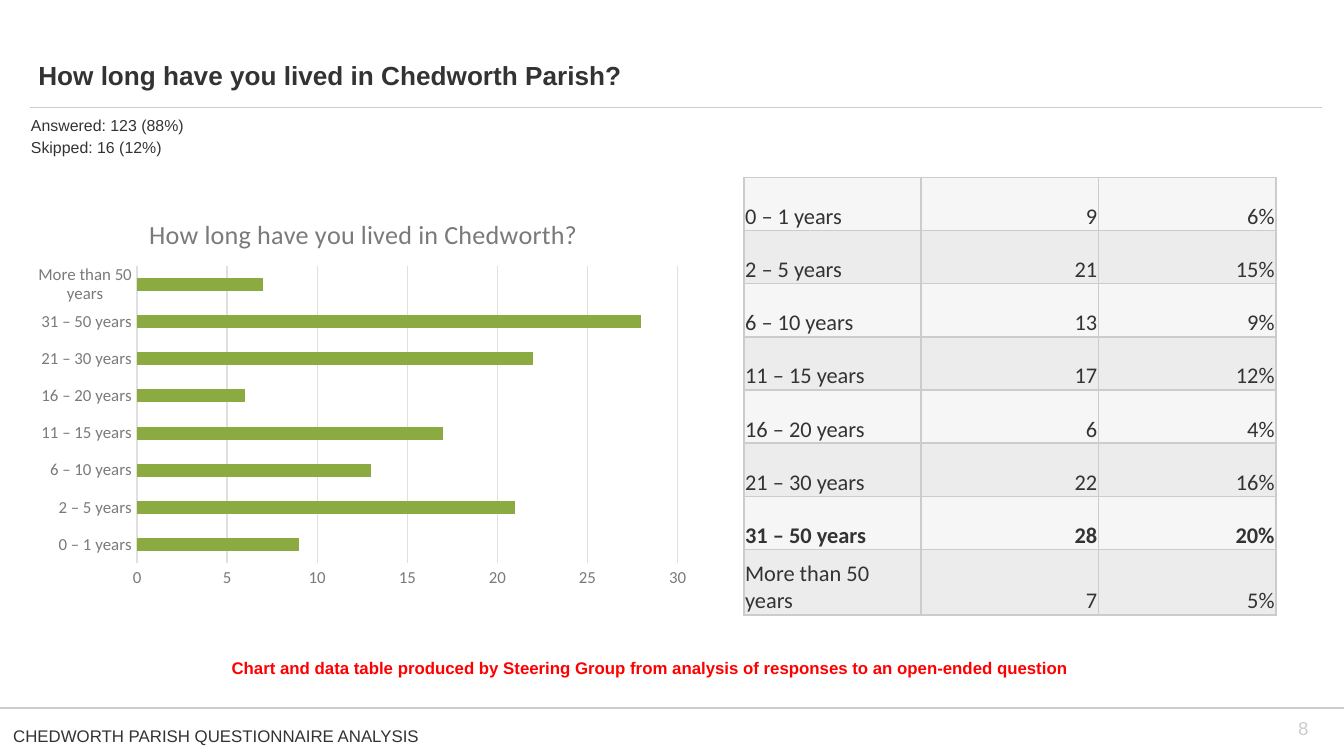
from dataclasses import dataclass

from lxml import etree
from pptx import Presentation
from pptx import chart as _chart
from pptx.chart import data as chart_data
from pptx.dml import color
from pptx.enum import chart as chart_enum, shapes, text
from pptx.oxml import ns, xmlchemy
from pptx.util import Pt


@dataclass(frozen=True)
class Theme:
    ink: str = "333333"
    muted: str = "7A7A7A"
    rule: str = "CCCCCC"
    grid: str = "E0E0E0"
    bar: str = "8BAB42"
    note: str = "FF0000"
    paper: str = "FFFFFF"
    bands: tuple = ("F6F6F6", "ECECEC")
    body: str = "Arial"
    data: str = "Calibri"
    title_size: float = 14
    table_size: float = 12
    number_size: float = 10
    small_size: float = 9
    answer_size: float = 8.5


THEME = Theme()
QUESTION = "How long have you lived in Chedworth"
RESPONSES = [
    ("0 – 1 years", 9, "6%"),
    ("2 – 5 years", 21, "15%"),
    ("6 – 10 years", 13, "9%"),
    ("11 – 15 years", 17, "12%"),
    ("16 – 20 years", 6, "4%"),
    ("21 – 30 years", 22, "16%"),
    ("31 – 50 years", 28, "20%"),
    ("More than 50 years", 7, "5%"),
]
ALIGN = text.PP_ALIGN
ANCHOR = text.MSO_ANCHOR


def rgb(value):
    return color.RGBColor.from_string(value)


def apply(target, values):
    for name, value in values.items():
        setattr(target, name, value)


def format_font(font, size, fill, name=THEME.body, bold=False):
    apply(font, {"size": Pt(size), "name": name, "bold": bold})
    font.color.rgb = rgb(fill)


def place(shape, box):
    apply(shape, dict(zip(("left", "top", "width", "height"), map(Pt, box))))


def write(frame, lines, size, fill, align=ALIGN.LEFT, anchor=ANCHOR.TOP, bold=False, gap=0):
    apply(frame, {"word_wrap": True, "vertical_anchor": anchor})
    for index, line in enumerate(lines):
        paragraph = frame.add_paragraph() if index else frame.paragraphs[0]
        paragraph.text = line
        apply(paragraph, {"alignment": align, "space_before": Pt(gap if index else 0)})
        format_font(paragraph.font, size, fill, bold=bold)


def add_text(slide, box, lines, size, fill, **options):
    shape = slide.shapes.add_textbox(*map(Pt, box))
    write(shape.text_frame, lines, size, fill, **options)
    return shape


def add_rule(slide, left, right, top, weight):
    rule = slide.shapes.add_connector(
        shapes.MSO_CONNECTOR.STRAIGHT, Pt(left), Pt(top), Pt(right), Pt(top))
    rule.line.color.rgb = rgb(THEME.rule)
    rule.line.width = Pt(weight)
    etree.SubElement(rule._element.spPr, ns.qn("a:effectLst"))


def add_heading(slide, box):
    left, top, width, height = box
    # Title, indented slightly from the rule below it
    title = slide.shapes.title
    place(title, (left, top, width, height))
    write(title.text_frame, [QUESTION + " Parish?"], THEME.title_size, THEME.ink,
          anchor=ANCHOR.BOTTOM, bold=True)
    apply(title.text_frame, {"margin_left": Pt(11), "margin_bottom": Pt(3.6)})
    add_rule(slide, left + 6.5, left + 698.5, top + 36, 0.5)
    # Response counts
    add_text(slide, (left, top + 36.7, 420, 27),
             ["Answered: 123 (88%)", "Skipped: 16 (12%)"],
             THEME.answer_size, THEME.ink, gap=1.7)


def add_bar_chart(slide, box):
    data = chart_data.CategoryChartData()
    data.categories = [label for label, _, _ in RESPONSES]
    data.add_series("Series 1", [count for _, count, _ in RESPONSES])
    chart = slide.shapes.add_chart(
        chart_enum.XL_CHART_TYPE.BAR_CLUSTERED, *map(Pt, box), data).chart
    format_font(chart.font, THEME.number_size, THEME.ink, THEME.data)
    chart.has_legend = False
    chart.has_title = True
    paragraph = chart.chart_title.text_frame.paragraphs[0]
    paragraph.text = QUESTION + "?"
    format_font(paragraph.runs[0].font, THEME.title_size, THEME.muted, THEME.data)
    chart.chart_title.include_in_layout = False

    # Bars
    plot = chart.plots[0]
    apply(plot, {"gap_width": 182, "vary_by_categories": False})
    fill = plot.series[0].format.fill
    fill.solid()
    fill.fore_color.rgb = rgb(THEME.bar)

    # Axes
    for axis in (chart.category_axis, chart.value_axis):
        apply(axis, {"major_tick_mark": chart_enum.XL_TICK_MARK.NONE,
                     "minor_tick_mark": chart_enum.XL_TICK_MARK.NONE})
        format_font(axis.tick_labels.font, THEME.small_size, THEME.muted, THEME.data)
    apply(chart.value_axis, {"minimum_scale": 0, "maximum_scale": 30, "major_unit": 5,
                             "has_major_gridlines": True})
    chart.value_axis.format.line.fill.background()
    for line in (chart.category_axis.format.line, chart.value_axis.major_gridlines.format.line):
        line.color.rgb = rgb(THEME.grid)
        line.width = Pt(0.75)

    # Inner plot area, as shares of the chart
    area = chart._chartSpace.chart.plotArea
    for old in area.findall(ns.qn("c:layout")):
        area.remove(old)
    layout = etree.Element(ns.qn("c:layout"))
    manual = etree.SubElement(layout, ns.qn("c:manualLayout"))
    for tag, value in {"layoutTarget": "inner", "xMode": "edge", "yMode": "edge",
                       "x": "0.165", "y": "0.175", "w": "0.8", "h": "0.745"}.items():
        etree.SubElement(manual, ns.qn("c:" + tag)).set("val", value)
    area.insert(0, layout)


def add_borders(cell):
    properties = cell._tc.get_or_add_tcPr()
    for index, side in enumerate(("lnL", "lnR", "lnT", "lnB")):
        line = etree.Element(ns.qn("a:" + side), w=str(Pt(1)))
        solid = etree.SubElement(line, ns.qn("a:solidFill"))
        etree.SubElement(solid, ns.qn("a:srgbClr"), val=THEME.rule)
        properties.insert(index, line)


def add_response_table(slide, box):
    left, top, width, height = box
    table = slide.shapes.add_table(len(RESPONSES), 3, *map(Pt, box)).table
    apply(table, {"first_row": False, "horz_banding": False})
    for column in table.columns:
        column.width = Pt(width / 3)
    row_height = 28.5
    for row in table.rows:
        row.height = Pt(row_height)
    # The last label takes two lines, so its row takes what is left
    table.rows[len(RESPONSES) - 1].height = Pt(height - row_height * (len(RESPONSES) - 1))
    most = max(count for _, count, _ in RESPONSES)
    for row, response in enumerate(RESPONSES):
        for column, value in enumerate(response):
            cell = table.cell(row, column)
            apply(cell, {"margin_left": Pt(0.7), "margin_right": Pt(0.7),
                         "margin_top": Pt(0.7), "margin_bottom": 0,
                         "vertical_anchor": ANCHOR.BOTTOM, "text": str(value)})
            cell.fill.solid()
            cell.fill.fore_color.rgb = rgb(THEME.bands[row % 2])
            add_borders(cell)
            paragraph = cell.text_frame.paragraphs[0]
            paragraph.alignment = ALIGN.RIGHT if column else ALIGN.LEFT
            format_font(paragraph.runs[0].font, THEME.table_size, THEME.ink, THEME.data,
                        bold=response[1] == most)


def add_footer(slide, box):
    left, top, width, height = box
    add_rule(slide, left, left + width, top, 1)
    label = add_text(slide, (left, top + 5.5, 243, 18),
                     ["CHEDWORTH PARISH QUESTIONNAIRE ANALYSIS"], THEME.small_size, THEME.ink)
    label.fill.solid()
    label.fill.fore_color.rgb = rgb(THEME.paper)
    add_text(slide, (left + 659, top, 49, 21.6), ["8"], THEME.number_size, THEME.rule,
             align=ALIGN.RIGHT, anchor=ANCHOR.MIDDLE)


def main():
    presentation = Presentation()
    apply(presentation, {"slide_width": Pt(720), "slide_height": Pt(405)})
    slide = presentation.slides.add_slide(presentation.slide_layouts.get_by_name("Title Only"))
    add_heading(slide, (9.5, 21.5, 648, 31))
    add_bar_chart(slide, (13.7, 105, 362, 214))
    add_response_table(slide, (398.5, 95, 285, 234.5))
    add_text(slide, (21.6, 349, 652.5, 18),
             ["Chart and data table produced by Steering Group from analysis of responses "
              "to an open-ended question"],
             THEME.small_size, THEME.note, align=ALIGN.CENTER, bold=True)
    add_footer(slide, (0, 379.5, 720, 25.5))
    presentation.save("out.pptx")


if __name__ == "__main__":
    main()
